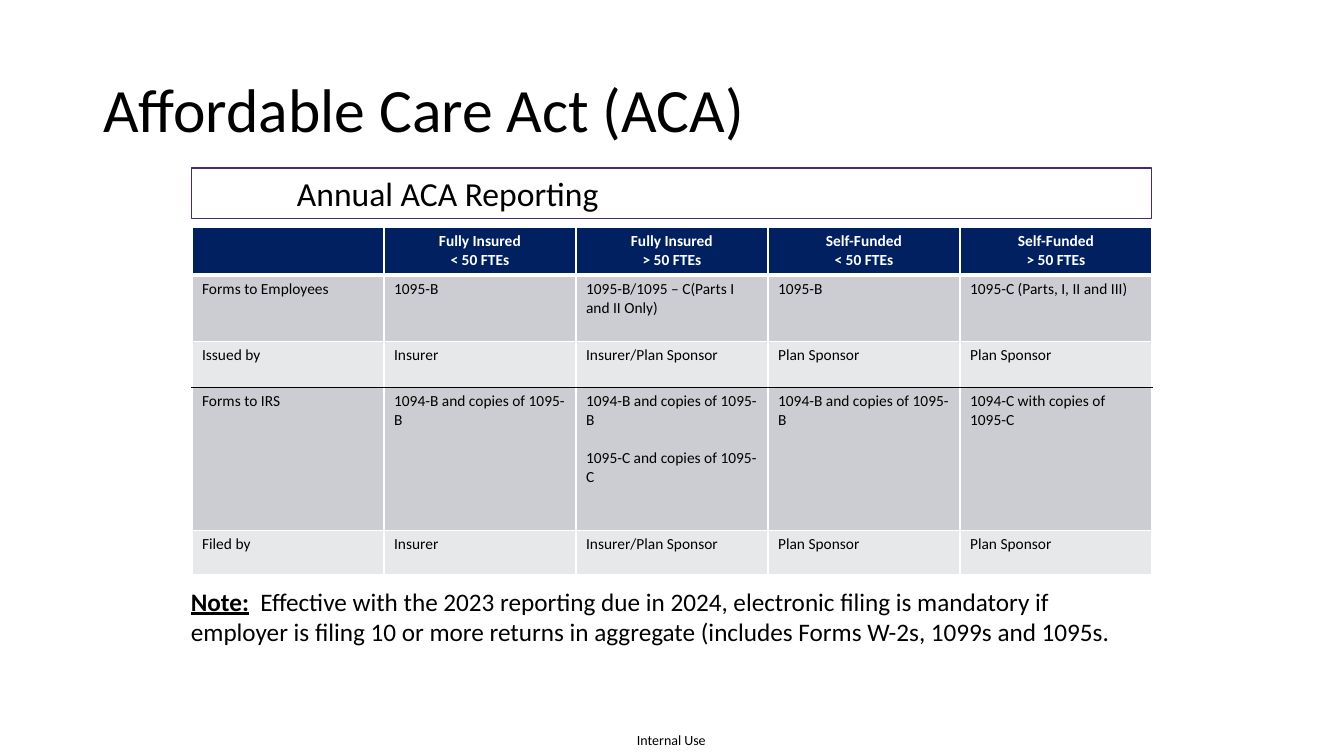
from lxml.etree import SubElement
from pptx import Presentation
from pptx.dml.color import RGBColor
from pptx.enum.shapes import MSO_SHAPE
from pptx.enum.text import MSO_ANCHOR, MSO_AUTO_SIZE, PP_ALIGN
from pptx.oxml.ns import qn
from pptx.util import Emu, Pt

SLIDE_WIDTH, SLIDE_HEIGHT = 1344, 756
SCALE = 12192000 / SLIDE_WIDTH
BLACK = RGBColor(0x00, 0x00, 0x00)
WHITE = RGBColor(0xFF, 0xFF, 0xFF)
NAVY = RGBColor(0x00, 0x20, 0x60)
PURPLE = RGBColor(0x45, 0x2B, 0x73)
DARK_BAND = RGBColor(0xCC, 0xCD, 0xD2)
LIGHT_BAND = RGBColor(0xE7, 0xE8, 0xEA)


def px(*lengths):
    return [Emu(round(length * SCALE)) for length in lengths]


def add_span(para, text, size, color=BLACK, bold=False, underline=False):
    span = para.add_run()
    span.text = text
    span.font.name = "Calibri"
    span.font.size = Pt(size)
    span.font.color.rgb = color
    span.font.bold = bold
    span.font.underline = underline


deck = Presentation()
deck.slide_width, deck.slide_height = px(SLIDE_WIDTH, SLIDE_HEIGHT)
page = deck.slides.add_slide(deck.slide_layouts[5])

# Title
title = page.shapes.title
title.left, title.top, title.width, title.height = px(93, 40, 1159, 146)
title.text_frame.auto_size = MSO_AUTO_SIZE.NONE
title.text_frame.vertical_anchor = MSO_ANCHOR.MIDDLE
para = title.text_frame.paragraphs[0]
para.alignment = PP_ALIGN.LEFT
para.line_spacing = 0.9
add_span(para, "Affordable Care Act (ACA)", 44)

# Reporting table: each cell is a list of paragraphs
TABLE_ROWS = [
    (47, NAVY, [[], ["Fully Insured", "< 50 FTEs"], ["Fully Insured", "> 50 FTEs"],
                ["Self-Funded", "< 50 FTEs"], ["Self-Funded", "> 50 FTEs"]]),
    (66, DARK_BAND, [["Forms to Employees"], ["1095-B"],
                     ["1095-B/1095 – C(Parts I and II Only)"], ["1095-B"],
                     ["1095-C (Parts, I, II and III)"]]),
    (46, LIGHT_BAND, [["Issued by"], ["Insurer"], ["Insurer/Plan Sponsor"],
                      ["Plan Sponsor"], ["Plan Sponsor"]]),
    (143, DARK_BAND, [["Forms to IRS"], ["1094-B and copies of 1095-B"],
                      ["1094-B and copies of 1095-B", "1095-C and copies of 1095-C"],
                      ["1094-B and copies of 1095-B"], ["1094-C with copies of 1095-C"]]),
    (45, LIGHT_BAND, [["Filed by"], ["Insurer"], ["Insurer/Plan Sponsor"],
                      ["Plan Sponsor"], ["Plan Sponsor"]]),
]
# Rule below a row, where it is not the thin white one
RULES_BELOW = {0: (WHITE, 3), 2: (BLACK, 1)}
THIN_WHITE = (WHITE, 1)

total_height = sum(height for height, _, _ in TABLE_ROWS)
table = page.shapes.add_table(len(TABLE_ROWS), 5, *px(192, 227, 960, total_height)).table
for column in table.columns:
    column.width = px(192)[0]

for row_index, (height, fill, cells) in enumerate(TABLE_ROWS):
    is_header = row_index == 0
    table.rows[row_index].height = px(height)[0]
    borders = {
        "a:lnL": THIN_WHITE,
        "a:lnR": THIN_WHITE,
        "a:lnT": RULES_BELOW.get(row_index - 1, THIN_WHITE),
        "a:lnB": RULES_BELOW.get(row_index, THIN_WHITE),
    }
    for column_index, lines in enumerate(cells):
        cell = table.cell(row_index, column_index)
        for line_index, line in enumerate(lines):
            frame = cell.text_frame
            para = frame.add_paragraph() if line_index else frame.paragraphs[0]
            if is_header:
                para.alignment = PP_ALIGN.CENTER
            elif line_index:
                para.space_before = Pt(13.5)
            add_span(para, line, 11, WHITE if is_header else BLACK, bold=is_header)
        properties = cell._tc.get_or_add_tcPr()
        for side, (color, width) in borders.items():
            border = SubElement(properties, qn(side), w=str(Pt(width)))
            solid = SubElement(border, qn("a:solidFill"))
            SubElement(solid, qn("a:srgbClr"), val=str(color))
        cell.fill.solid()
        cell.fill.fore_color.rgb = fill

# Banner above the table
banner = page.shapes.add_shape(MSO_SHAPE.RECTANGLE, *px(192, 168, 960, 51))
banner.shadow.inherit = False
banner.fill.background()
banner.line.color.rgb = PURPLE
banner.line.width = Pt(0.75)
banner.text_frame.margin_left = px(105)[0]
banner.text_frame.vertical_anchor = MSO_ANCHOR.MIDDLE
para = banner.text_frame.paragraphs[0]
para.alignment = PP_ALIGN.LEFT
add_span(para, "Annual ACA Reporting", 24)

# Note below the table
note = page.shapes.add_textbox(*px(181, 581, 946, 102))
note.text_frame.word_wrap = True
para = note.text_frame.paragraphs[0]
add_span(para, "Note:", 18, bold=True, underline=True)
add_span(para, "  ", 18, bold=True)
add_span(para, "Effective with the 2023 reporting due in 2024, electronic filing is mandatory if "
               "employer is filing 10 or more returns in aggregate (includes Forms W-2s, "
               "1099s and 1095s.", 18)

# Classification label
label = page.shapes.add_textbox(*px(637, 732, 73, 17))
frame = label.text_frame
frame.margin_left = frame.margin_top = frame.margin_right = frame.margin_bottom = 0
frame.word_wrap = False
add_span(frame.paragraphs[0], "Internal Use", 10)

deck.save("out.pptx")
